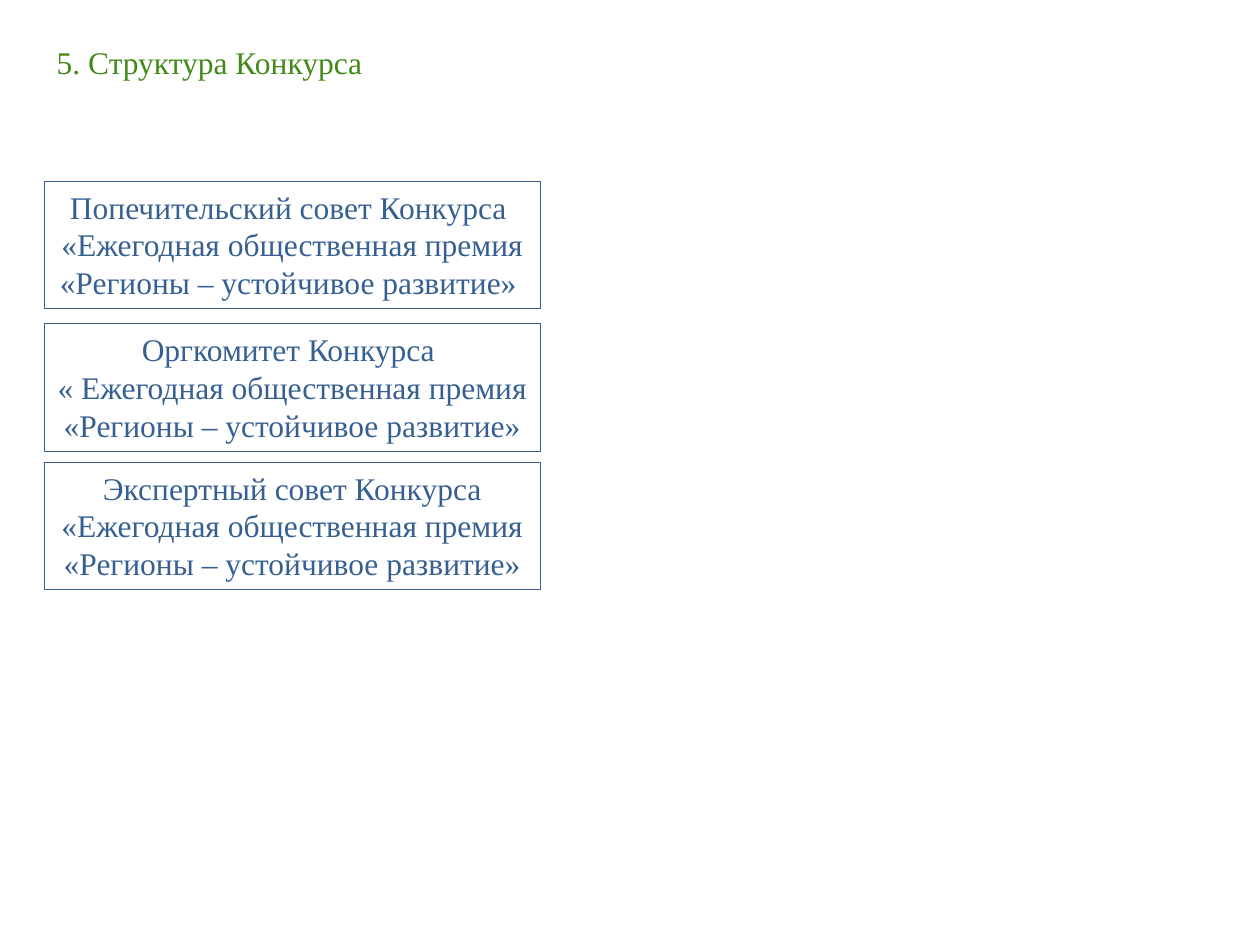
from dataclasses import dataclass

from pptx import Presentation
from pptx.dml.color import RGBColor as RGB
from pptx.enum.shapes import MSO_SHAPE as SHAPE
from pptx.enum.text import MSO_ANCHOR as ANCHOR, MSO_AUTO_SIZE as FIT, PP_ALIGN as ALIGN
from pptx.util import Inches, Pt

# Content: each body of the contest with its top edge
TITLE = "5. Структура Конкурса"
BODIES = [
    (1.44, ["Попечительский совет Конкурса  «Ежегодная общественная премия",
            "«Регионы – устойчивое развитие» "]),
    (2.57, ["Оргкомитет Конкурса ",
            "« Ежегодная общественная премия «Регионы – устойчивое развитие»"]),
    (3.67, ["Экспертный совет Конкурса «Ежегодная общественная премия",
            "«Регионы – устойчивое развитие»"]),
]
LEFT, BOX_W, BOX_H = 0.35, 3.94, 1.01


@dataclass(frozen=True)
class Theme:
    font: str = "Times New Roman"
    size: float = 18
    line: float = 0.5
    green: RGB = RGB(0x41, 0x8A, 0x18)
    blue: RGB = RGB(0x37, 0x60, 0x92)


THEME = Theme()


def write(sp, lines, *, color, align=ALIGN.LEFT, anchor=ANCHOR.TOP, wrap=True):
    tf = sp.text_frame
    tf.word_wrap = wrap
    tf.auto_size = FIT.NONE
    tf.vertical_anchor = anchor
    for i, line in enumerate(lines):
        p = tf.paragraphs[0] if i == 0 else tf.add_paragraph()
        p.alignment = align
        r = p.add_run()
        r.text = line
        r.font.name = THEME.font
        r.font.size = Pt(THEME.size)
        r.font.color.rgb = color


prs = Presentation()
prs.slide_width, prs.slide_height = Inches(10), Inches(7.5)
slide = prs.slides.add_slide(prs.slide_layouts[5])

# Title
title = slide.shapes.title
title.left, title.top = Inches(LEFT), Inches(0.29)
title.width, title.height = Inches(2.65), Inches(0.4)
write(title, [TITLE], color=THEME.green, wrap=False)

# Outlined boxes
for top, lines in BODIES:
    sp = slide.shapes.add_shape(SHAPE.RECTANGLE, Inches(LEFT), Inches(top),
                                Inches(BOX_W), Inches(BOX_H))
    sp.shadow.inherit = False
    sp.fill.background()
    sp.line.color.rgb = THEME.blue
    sp.line.width = Pt(THEME.line)
    write(sp, lines, color=THEME.blue, align=ALIGN.CENTER)

prs.save("out.pptx")
